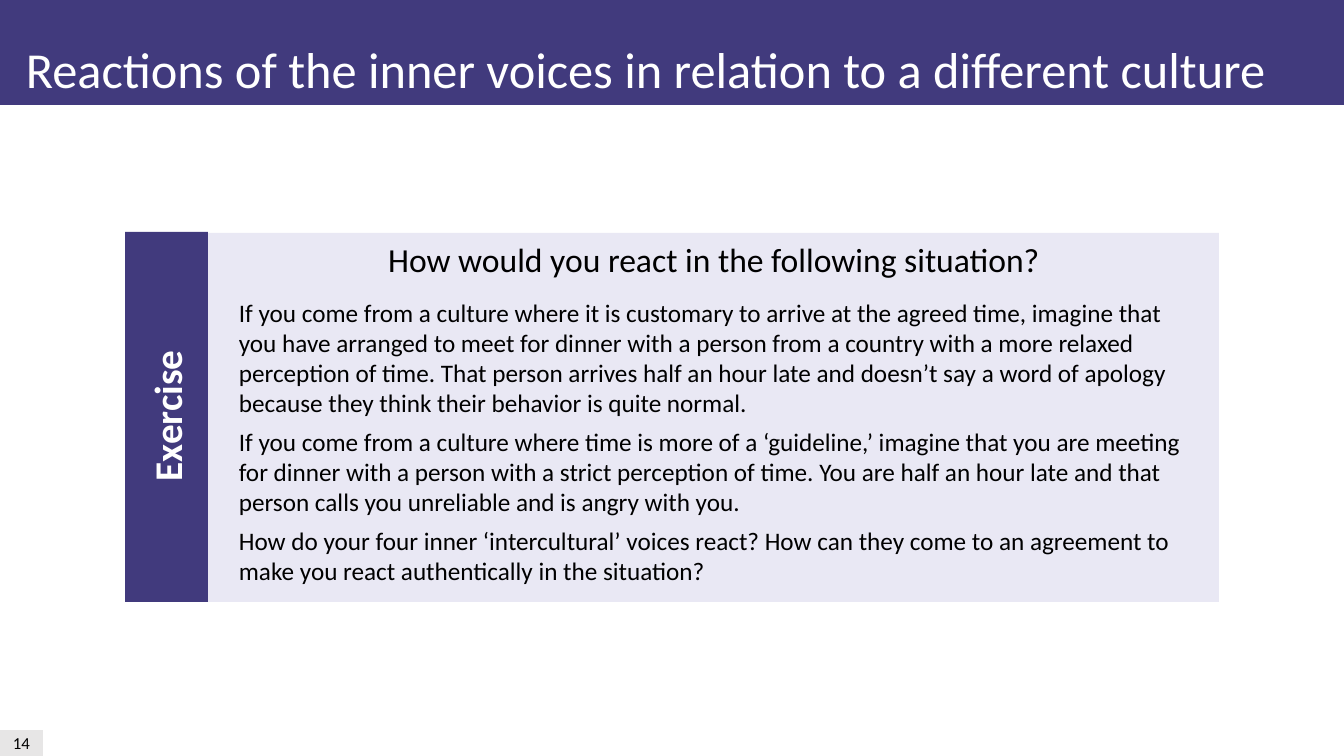
"""Build the exercise slide on inner voices and a different culture."""
import pptx
import pptx.dml.color
import pptx.enum.shapes
import pptx.enum.text
import pptx.util

TITLE = "Reactions of the inner voices in relation to a different culture"
PAGE_NUMBER = "14"
EXERCISE = "Exercise"
QUESTION = "How would you react in the following situation?"
SITUATIONS = [
    "If you come from a culture where it is customary to arrive at the agreed time, "
    "imagine that you have arranged to meet for dinner with a person from a country "
    "with a more relaxed perception of time. That person arrives half an hour late and "
    "doesn’t say a word of apology because they think their behavior is quite normal.",
    "If you come from a culture where time is more of a ‘guideline,’ imagine that you "
    "are meeting for dinner with a person with a strict perception of time. You are "
    "half an hour late and that person calls you unreliable and is angry with you.",
    "How do your four inner ‘intercultural’ voices react? How can they come to an "
    "agreement to make you react authentically in the situation?",
]

PURPLE = pptx.dml.color.RGBColor(0x41, 0x3A, 0x7D)
LAVENDER = pptx.dml.color.RGBColor(0xE9, 0xE8, 0xF4)
GREY = pptx.dml.color.RGBColor(0xE7, 0xE6, 0xE6)
BLACK = pptx.dml.color.RGBColor(0, 0, 0)
WHITE = pptx.dml.color.RGBColor(0xFF, 0xFF, 0xFF)

FONT = "Calibri"
PX_PER_INCH = 100.8
SLIDE_WIDTH, SLIDE_HEIGHT = 1344, 756
BANNER_HEIGHT = 105
CARD_LEFT, CARD_TOP, CARD_WIDTH, CARD_HEIGHT = 125, 232, 1094, 370
TAB_WIDTH = 83
LABEL_WIDTH, LABEL_HEIGHT = 155, 57
TEXT_LEFT = 229
NUMBER_WIDTH, NUMBER_HEIGHT = 43, 26

LEFT = pptx.enum.text.PP_ALIGN.LEFT
CENTER = pptx.enum.text.PP_ALIGN.CENTER


def px(length):
    return pptx.util.Inches(length / PX_PER_INCH)


def add_block(slide, box, fill):
    block = slide.shapes.add_shape(
        pptx.enum.shapes.MSO_SHAPE.RECTANGLE, *map(px, box))
    block.shadow.inherit = False
    block.fill.solid()
    block.fill.fore_color.rgb = fill
    block.line.fill.background()
    return block


def write(shape, texts, size, color, align=LEFT, bold=False, after=0, wrap=True):
    frame = shape.text_frame
    frame.word_wrap = wrap
    frame.text = "\n".join(texts)
    for paragraph in frame.paragraphs:
        paragraph.alignment = align
        paragraph.space_after = pptx.util.Pt(after)
        paragraph.font.name = FONT
        paragraph.font.size = pptx.util.Pt(size)
        paragraph.font.bold = bold
        paragraph.font.color.rgb = color


def add_text(slide, box, texts, size, color, **style):
    text = slide.shapes.add_textbox(*map(px, box))
    write(text, texts, size, color, **style)
    return text


def main():
    deck = pptx.Presentation()
    deck.slide_width, deck.slide_height = px(SLIDE_WIDTH), px(SLIDE_HEIGHT)
    slide = deck.slides.add_slide(deck.slide_layouts[6])

    number = add_block(
        slide, (0, SLIDE_HEIGHT - NUMBER_HEIGHT, NUMBER_WIDTH, NUMBER_HEIGHT), GREY)
    number.text_frame.vertical_anchor = pptx.enum.text.MSO_ANCHOR.MIDDLE
    write(number, [PAGE_NUMBER], 12, BLACK, align=CENTER)

    add_block(slide, (0, 0, SLIDE_WIDTH, BANNER_HEIGHT), PURPLE)
    add_text(slide, (16, 33, 1273, 72), [TITLE], 36, WHITE, wrap=False)

    add_block(slide, (CARD_LEFT + TAB_WIDTH, CARD_TOP + 1,
                      CARD_WIDTH - TAB_WIDTH, CARD_HEIGHT - 1), LAVENDER)
    add_text(slide, (TEXT_LEFT, 234, 970, 68), [QUESTION], 24, BLACK, align=CENTER)

    add_block(slide, (CARD_LEFT, CARD_TOP, TAB_WIDTH, CARD_HEIGHT), PURPLE)
    label_left = CARD_LEFT + (TAB_WIDTH - LABEL_WIDTH) // 2
    label = add_text(slide, (label_left, 385, LABEL_WIDTH, LABEL_HEIGHT),
                     [EXERCISE], 28, WHITE, bold=True)
    label.rotation = 270

    add_text(slide, (TEXT_LEFT, 292, 978, 310), SITUATIONS, 18, BLACK, after=6)
    deck.save("out.pptx")


if __name__ == "__main__":
    main()
